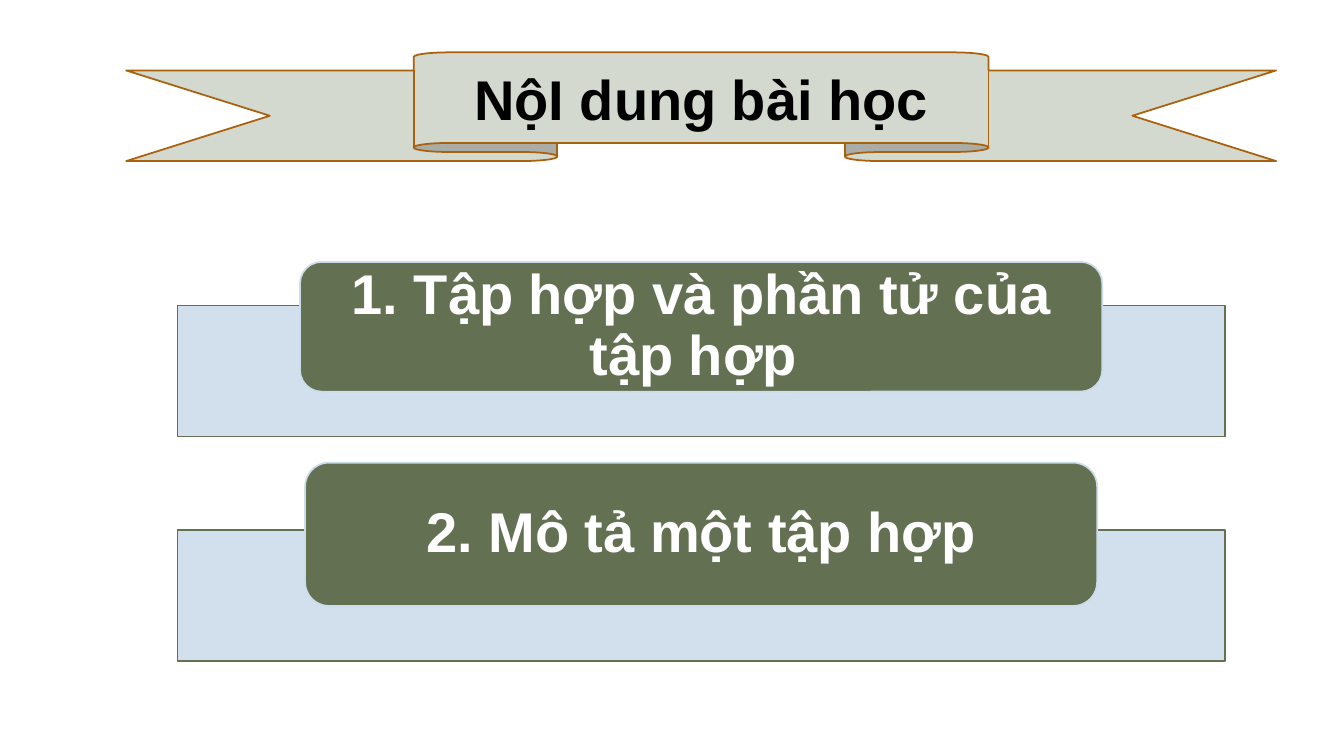
from pptx import Presentation
from pptx.dml.color import RGBColor
from pptx.enum import shapes, text
from pptx.oxml.ns import qn
from pptx.util import Cm, Pt
from lxml import etree

TITLE = "NộI dung bài học"
SECTIONS = [
    {"text": "1. Tập hợp và phần tử của tập hợp ", "top": 6.6, "width": 20.22, "height": 3.27},
    {"text": "2. Mô tả một tập hợp", "top": 11.66, "width": 19.96, "height": 3.61},
]
CENTER = 17.67
BAR_TOP, BAR_STEP, BAR_WIDTH, BAR_HEIGHT = 7.7, 5.66, 26.39, 3.3
RIBBON_TOP, RIBBON_WIDTH, RIBBON_HEIGHT = 1.32, 28.98, 2.74
GREEN, BLUE, SAGE, BROWN = "637052", "CCDDEA", "D4D9CF", "A9610D"


def color(value):
    return RGBColor.from_string(value)


def centered(top, width, height):
    return Cm(CENTER - width / 2), Cm(top), Cm(width), Cm(height)


def add_box(s, kind, box, fill, line):
    sp = s.shapes.add_shape(kind, *box)
    sp.shadow.inherit = False
    sp.fill.solid()
    sp.fill.fore_color.rgb = color(fill)
    sp.line.color.rgb = color(line)
    sp.line.width = Pt(1.25)
    return sp


def set_opacity(sp, percent):
    rgb = sp.fill._xPr.find(qn("a:solidFill")).find(qn("a:srgbClr"))
    etree.SubElement(rgb, qn("a:alpha")).set("val", str(percent * 1000))


def write(sp, words, value, margin_x, margin_y, spacing):
    tf = sp.text_frame
    tf.text = words
    tf.word_wrap = True
    tf.auto_size = text.MSO_AUTO_SIZE.NONE
    tf.vertical_anchor = text.MSO_ANCHOR.MIDDLE
    tf.margin_left = tf.margin_right = Cm(margin_x)
    tf.margin_top = tf.margin_bottom = Cm(margin_y)
    p = tf.paragraphs[0]
    p.alignment = text.PP_ALIGN.CENTER
    p.line_spacing = spacing
    font = p.runs[0].font
    font.name = "Arial"
    font.size = Pt(40)
    font.bold = True
    font.color.rgb = color(value)


prs = Presentation()
prs.slide_width, prs.slide_height = Cm(33.87), Cm(19.05)
s = prs.slides.add_slide(prs.slide_layouts[5])

for i, section in enumerate(SECTIONS):
    bar = centered(BAR_TOP + i * BAR_STEP, BAR_WIDTH, BAR_HEIGHT)
    sp = add_box(s, shapes.MSO_SHAPE.RECTANGLE, bar, BLUE, GREEN)
    set_opacity(sp, 90)
    label = centered(section["top"], section["width"], section["height"])
    sp = add_box(s, shapes.MSO_SHAPE.ROUNDED_RECTANGLE, label, GREEN, BLUE)
    write(sp, section["text"], "FFFFFF", 0.7, 0, 0.9)

ribbon = centered(RIBBON_TOP, RIBBON_WIDTH, RIBBON_HEIGHT)
add_box(s, shapes.MSO_SHAPE.UP_RIBBON, ribbon, SAGE, BROWN)

title = s.shapes.title
title.left, title.top, title.width, title.height = centered(
    RIBBON_TOP, RIBBON_WIDTH / 2, RIBBON_HEIGHT * 5 / 6)
write(title, TITLE, "000000", 0.25, 0.13, 1.0)
s.shapes._spTree.append(title._element)

prs.save("out.pptx")
